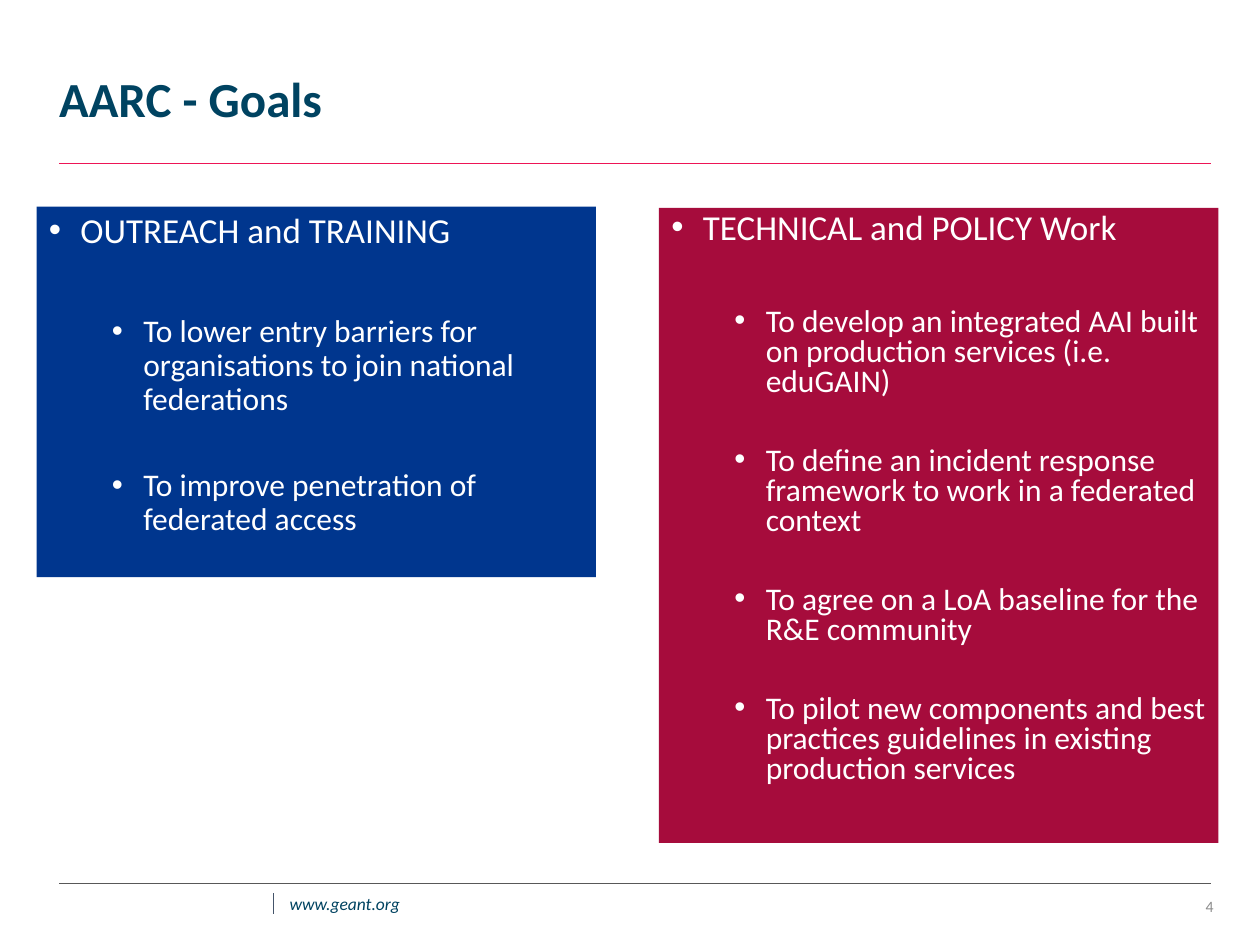
"""Build the AARC goals slide with two panels of bulleted aims."""
import pptx
import pptx.util
import pptx.dml.color
import pptx.enum.shapes
import pptx.enum.text
import pptx.oxml
import pptx.oxml.ns

Inches = pptx.util.Inches
Pt = pptx.util.Pt
Align = pptx.enum.text.PP_ALIGN
Anchor = pptx.enum.text.MSO_ANCHOR

HUES = {
    "teal": "004361", "pink": "ED1556", "slate": "44546A", "dark": "585858",
    "blue": "00368E", "red": "A60C3C", "white": "FFFFFF", "grey": "8C8C8C",
}
LINE = 1.22


def hue(name):
    return pptx.dml.color.RGBColor.from_string(HUES[name])


class Page:
    def __init__(self, deck, face="Calibri"):
        self.slide = deck.slides.add_slide(deck.slide_layouts[5])
        self.face = face

    def words(self, para, text, size, tint, bold=False, slant=False):
        run = para.add_run()
        run.text = text
        font = run.font
        font.name, font.size = self.face, Pt(size)
        font.bold, font.italic = bold, slant
        font.color.rgb = hue(tint)

    def title(self, text, box):
        head = self.slide.shapes.title
        head.left, head.top, head.width, head.height = map(Inches, box)
        frame = head.text_frame
        frame.vertical_anchor = Anchor.MIDDLE
        para = frame.paragraphs[0]
        para.alignment, para.line_spacing = Align.LEFT, 0.9
        self.words(para, text, 28, "teal", bold=True)

    def rule(self, start, end, tint):
        line = self.slide.shapes.add_connector(
            pptx.enum.shapes.MSO_CONNECTOR.STRAIGHT, *map(Inches, start + end))
        line.line.color.rgb = hue(tint)
        line.line.width = Pt(0.5)
        props = line._element.spPr
        props.append(pptx.oxml.parse_xml(
            "<a:effectLst %s/>" % pptx.oxml.ns.nsdecls("a")))

    def label(self, text, box, size, tint, side=Align.LEFT,
              anchor=Anchor.TOP, slant=False):
        frame = self.slide.shapes.add_textbox(*map(Inches, box)).text_frame
        frame.word_wrap = True
        frame.vertical_anchor = anchor
        para = frame.paragraphs[0]
        para.alignment = side
        self.words(para, text, size, tint, slant=slant)

    def bullet(self, para, text, size, left, space, before):
        props = para._p.get_or_add_pPr()
        props.set("marL", str(Inches(left)))
        props.set("indent", str(Inches(-0.25)))
        for tag in ('<a:buFont %s typeface="Arial"/>', '<a:buChar %s char="•"/>'):
            props.append(pptx.oxml.parse_xml(tag % pptx.oxml.ns.nsdecls("a")))
        para.alignment = Align.LEFT
        para.line_spacing = space
        para.space_before = Pt(round(before, 1))
        self.words(para, text, size, "white")

    def panel(self, box, tint, space, head, items):
        shape = self.slide.shapes.add_shape(
            pptx.enum.shapes.MSO_SHAPE.RECTANGLE, *map(Inches, box))
        shape.shadow.inherit = False
        shape.fill.solid()
        shape.fill.fore_color.rgb = hue(tint)
        shape.line.fill.background()
        frame = shape.text_frame
        frame.word_wrap = True
        frame.vertical_anchor = Anchor.TOP
        self.bullet(frame.paragraphs[0], head, 20, 0.25, space, 0)
        gap = 15 + 20 * LINE * space
        for item in items:
            self.bullet(frame.add_paragraph(), item, 18, 0.75, space, gap)
            gap = 10 + 18 * LINE * space


def main():
    deck = pptx.Presentation()
    deck.slide_width, deck.slide_height = Inches(10), Inches(7.5)
    page = Page(deck)
    for high, tint in ((1.3, "pink"), (7.01, "dark")):
        page.rule((0.47, high), (9.61, high), tint)
    page.rule((2.17, 7.09), (2.17, 7.25), "slate")
    page.label("www.geant.org", (2.2, 7.04, 1.39, 0.27), 10, "teal", slant=True)
    page.label("4", (9.31, 6.99, 0.42, 0.4), 9, "grey",
               side=Align.RIGHT, anchor=Anchor.MIDDLE)
    page.title("AARC - Goals", (0.37, 0.08, 7.88, 1.45))
    page.panel((0.29, 1.64, 4.44, 2.94), "blue", 0.9, "OUTREACH and TRAINING", (
        "To lower entry barriers for organisations to join national federations",
        "To improve penetration of federated access",
    ))
    page.panel((5.23, 1.65, 4.44, 5.04), "red", 0.8, "TECHNICAL and POLICY Work", (
        "To develop an integrated AAI built on production services (i.e. eduGAIN)",
        "To define an incident response framework to work in a federated context",
        "To agree on a LoA baseline for the R&E community",
        "To pilot new components and best practices guidelines in "
        "existing production services",
    ))
    deck.save("out.pptx")


if __name__ == "__main__":
    main()
